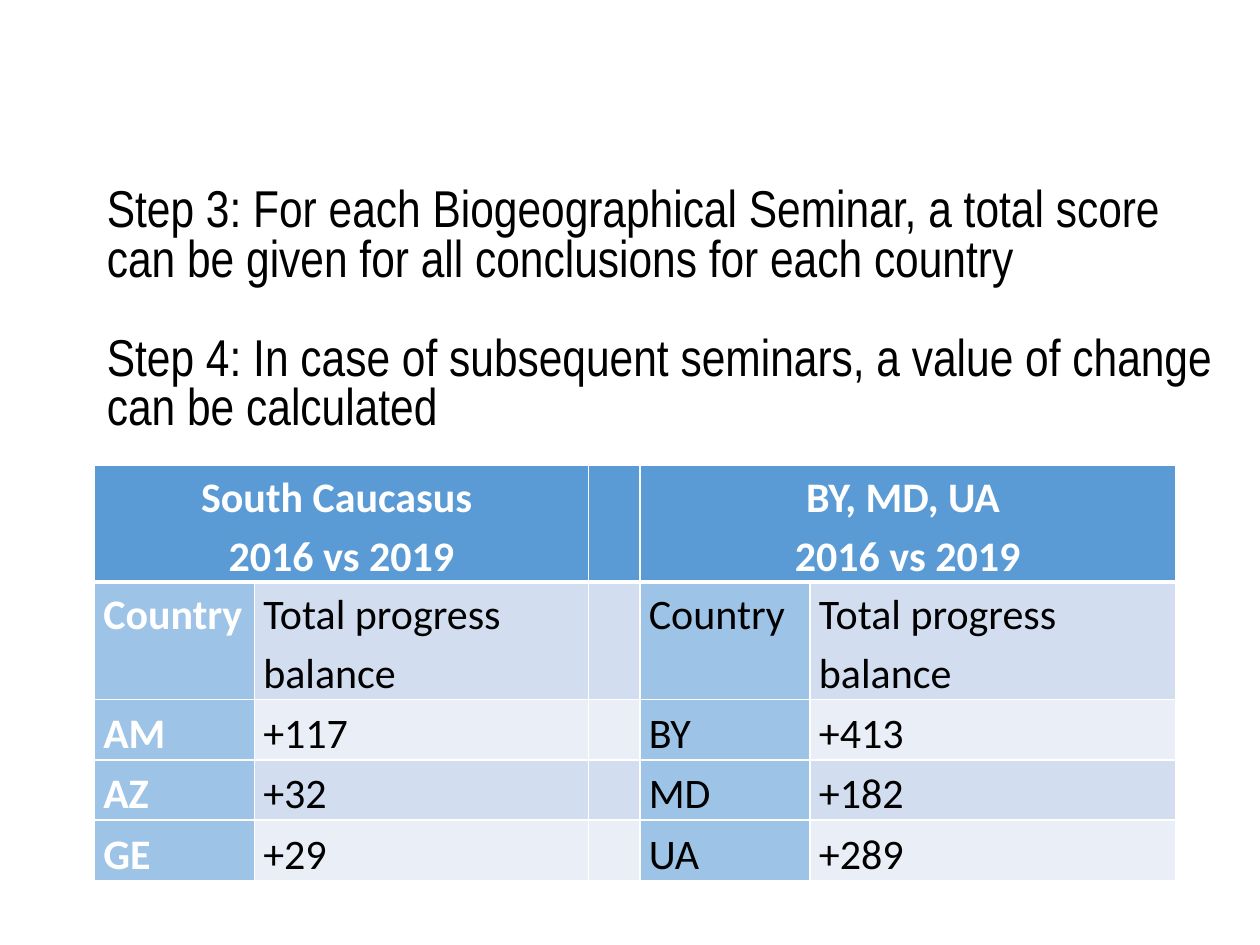
import pptx
import pptx.dml.color
import pptx.enum.text
import pptx.oxml
import pptx.oxml.ns
import pptx.util

Inches = pptx.util.Inches
Pt = pptx.util.Pt
Align = pptx.enum.text.PP_ALIGN
Anchor = pptx.enum.text.MSO_ANCHOR


def colour(value):
    return pptx.dml.color.RGBColor.from_string(value)


def apply(target, values):
    for name, value in values.items():
        setattr(target, name, value)


class SeminarPage:
    white, black = "FFFFFF", "000000"
    header_fill, label_fill = "5B9BD5", "9DC3E6"
    band_fills = ("D2DEEF", "EAEFF7")
    step_font = {"name": "Arial Narrow", "size": Pt(29.6)}
    table_font = {"name": "Calibri", "size": Pt(24)}
    cell_margins = {
        "margin_left": Inches(0.07), "margin_right": Inches(0.07),
        "margin_top": 0, "margin_bottom": 0,
    }

    def __init__(self, deck):
        self.page = deck.slides.add_slide(deck.slide_layouts[6])

    def paragraph(self, para, text, font, hue, layout):
        para.text = text
        apply(para, layout)
        for span in para.runs:
            apply(span.font, font)
            span.font.color.rgb = colour(hue)

    def steps(self, left, top, width, height, texts):
        box = self.page.shapes.add_textbox(
            Inches(left), Inches(top), Inches(width), Inches(height))
        frame = box.text_frame
        apply(frame, {"word_wrap": True, "vertical_anchor": Anchor.MIDDLE})
        for index, text in enumerate(texts):
            para = frame.add_paragraph() if index else frame.paragraphs[0]
            gap = Pt(28) if index else Pt(0)
            self.paragraph(para, text, self.step_font, self.black,
                           {"line_spacing": 0.8, "space_before": gap})

    def borders(self, cell, widths):
        properties = cell._tc.get_or_add_tcPr()
        for index, (side, width) in enumerate(widths.items()):
            line = pptx.oxml.parse_xml(
                f'<a:{side} {pptx.oxml.ns.nsdecls("a")} w="{Pt(width)}">'
                f'<a:solidFill><a:srgbClr val="{self.white}"/></a:solidFill>'
                f'</a:{side}>')
            properties.insert(index, line)

    def cell(self, table, row, column, text):
        cell = table.cell(row, column)
        header, label = row == 0, column in (0, 3)
        if header:
            fill = self.header_fill
        elif label:
            fill = self.label_fill
        else:
            fill = self.band_fills[(row - 1) % 2]
        cell.fill.solid()
        cell.fill.fore_color.rgb = colour(fill)
        self.borders(cell, {"lnL": 1, "lnR": 1,
                            "lnT": 3 if row == 1 else 1,
                            "lnB": 3 if header else 1})
        if text:
            strong = header or (column == 0 and row > 0)
            apply(cell, self.cell_margins)
            cell.vertical_anchor = Anchor.BOTTOM if row > 1 else Anchor.TOP
            self.paragraph(cell.text_frame.paragraphs[0], text,
                           {**self.table_font, "bold": strong},
                           self.white if strong else self.black,
                           {"line_spacing": 1.15,
                            "alignment": Align.CENTER if header else Align.LEFT})

    def score_table(self, left, top, widths, heights, rows):
        table = self.page.shapes.add_table(
            len(heights), len(widths), Inches(left), Inches(top),
            Inches(sum(widths)), Inches(sum(heights))).table
        for column, width in zip(table.columns, widths):
            column.width = Inches(width)
        for row, height in zip(table.rows, heights):
            row.height = Inches(height)
        for row, texts in enumerate(rows):
            for column, text in enumerate(texts):
                self.cell(table, row, column, text)
        for column in (0, 3):
            table.cell(0, column).merge(table.cell(0, column + 1))


def main():
    deck = pptx.Presentation()
    apply(deck, {"slide_width": Inches(10), "slide_height": Inches(7.5)})
    page = SeminarPage(deck)
    page.steps(0.75, 1.41, 9, 2.13, [
        "Step 3: For each Biogeographical Seminar, a total score can be given "
        "for all conclusions for each country",
        "Step 4: In case of subsequent seminars, a value of change can be "
        "calculated",
    ])
    headings = ("Country", "Total progress balance")
    page.score_table(
        0.75, 3.69, [1.27, 2.65, 0.41, 1.35, 2.9],
        [0.93, 0.93, 0.48, 0.48, 0.48],
        [
            ("South Caucasus \v2016 vs 2019", "", "",
             "BY, MD, UA \v2016 vs 2019", ""),
            (*headings, "", *headings),
            ("AM", "+117", "", "BY", "+413"),
            ("AZ", "+32", "", "MD", "+182"),
            ("GE", "+29", "", "UA", "+289"),
        ])
    deck.save("out.pptx")


if __name__ == "__main__":
    main()
